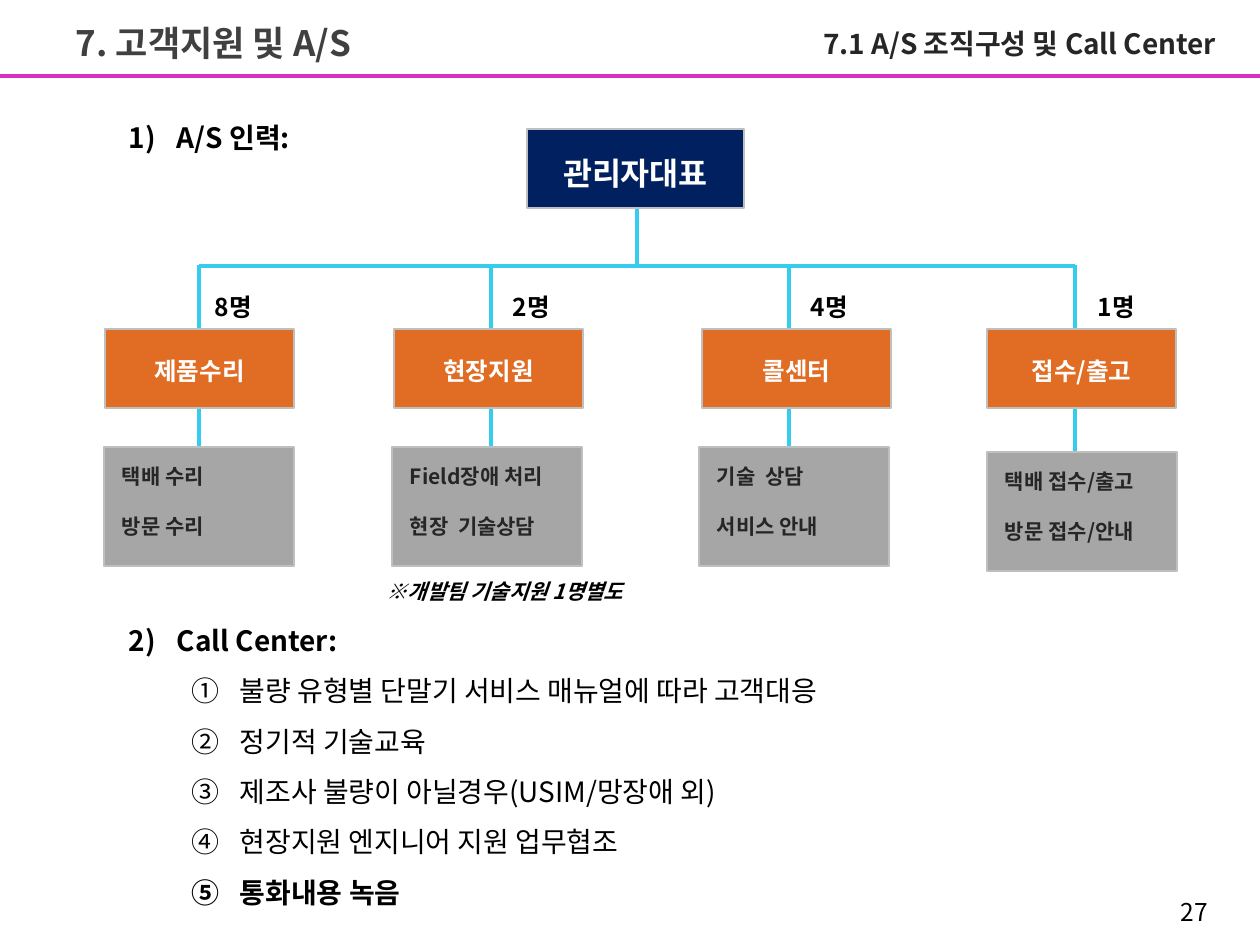
"""Build the A/S organisation and call center slide."""
from lxml import etree
from pptx import Presentation
from pptx.dml.color import RGBColor
from pptx.enum.shapes import MSO_CONNECTOR, MSO_SHAPE
from pptx.enum.text import PP_ALIGN
from pptx.oxml.ns import qn
from pptx.util import Pt

LEFT, CENTER, RIGHT = PP_ALIGN.LEFT, PP_ALIGN.CENTER, PP_ALIGN.RIGHT
RECT, STRAIGHT = MSO_SHAPE.RECTANGLE, MSO_CONNECTOR.STRAIGHT
FONT = "Noto Sans CJK KR"
CYAN, MAGENTA, NAVY, ORANGE, GRAY = "35CCEF", "D82EC4", "002060", "E16D25", "A6A6A6"
EDGE, WHITE, BLACK, DARK, TITLE = "BFBFBF", "FFFFFF", "000000", "262626", "404040"


def px(*values):
    return [round(v * 914400 / 126) for v in values]


def color(value):
    return RGBColor.from_string(value)


prs = Presentation()
prs.slide_width, prs.slide_height = px(1260, 945)
s = prs.slides.add_slide(prs.slide_layouts[6])

columns = [
    (199, 105, 104, 447, 215, "8명", "제품수리", ["택배 수리", "방문 수리"]),
    (491, 394, 392, 447, 513, "2명", "현장지원", ["Field장애 처리", "현장  기술상담"]),
    (789, 702, 699, 447, 811, "4명", "콜센터", ["기술  상담", "서비스 안내"]),
    (1075, 987, 987, 452, 1098, "1명", "접수/출고", ["택배 접수/출고", "방문 접수/안내"]),
]

lines = [(x, 265, x, 451, CYAN, 2) for x, *_ in columns]
lines += [
    (0, 76, 1260, 76, MAGENTA, 2.25),
    (199, 266, 1075, 266, CYAN, 2),
    (637, 208, 637, 265, CYAN, 2),
]
for x1, y1, x2, y2, stroke, width in lines:
    c = s.shapes.add_connector(STRAIGHT, *px(x1, y1, x2, y2))
    c.line.color.rgb = color(stroke)
    c.line.width = Pt(width)
    etree.SubElement(c._element.spPr, qn("a:effectLst"))

bold = {"bold": True}
items = [
    ((527, 129, 217, 79), NAVY, (0, 25), ["관리자대표"], 18, WHITE, CENTER, bold),
    ((76, 21, 540, 45), None, (0, 0), ["7. 고객지원 및 A/S"], 20, TITLE, LEFT, bold),
    ((689, 27, 527, 40), None, (0, 0), ["7.1 A/S 조직구성 및 Call Center"], 16, DARK, RIGHT, bold),
    ((387, 579, 274, 30), None, (0, 0), ["※개발팀 기술지원 1명별도"], 12, BLACK, LEFT,
     {"bold": True, "italic": True}),
    ((927, 897, 281, 32), None, (0, 0), ["27"], 14, BLACK, RIGHT, {}),
]
for _, team_x, task_x, task_y, count_x, count, team, tasks in columns:
    items += [
        ((team_x, 329, 189, 79), ORANGE, (0, 27), [team], 14, WHITE, CENTER, bold),
        ((task_x, task_y, 190, 119), GRAY, (18, 16), tasks, 12, DARK, LEFT, bold),
        ((count_x, 292, 60, 32), None, (0, 0), [count], 14, BLACK, LEFT, bold),
    ]

paragraphs = []
for box, fill, (inset_x, inset_y), texts, size, ink, align, style in items:
    if fill:
        sp = s.shapes.add_shape(RECT, *px(*box))
        sp.shadow.inherit = False
        sp.fill.solid()
        sp.fill.fore_color.rgb = color(fill)
        sp.line.color.rgb = color(EDGE)
        sp.line.width = Pt(1)
    else:
        sp = s.shapes.add_textbox(*px(*box))
    tf = sp.text_frame
    margins = px(inset_x, inset_y, 0, 0)
    tf.margin_left, tf.margin_top, tf.margin_right, tf.margin_bottom = margins
    tf.word_wrap = True
    tf.vertical_anchor = 1
    for i, text in enumerate(texts):
        p = tf.paragraphs[0] if i == 0 else tf.add_paragraph()
        p.alignment = align
        p.line_spacing = Pt(size * 1.2)
        if i:
            p.space_before = Pt(14.2)
        paragraphs.append((p, text, size, ink, style))

heading, numbered = (1, 111, "arabicParenR"), (2, 174, "circleNumDbPlain")
outline = [
    (104, [("A/S 인력:", heading, 1, True)]),
    (607, [
        ("Call Center:", heading, 2, True),
        ("불량 유형별 단말기 서비스 매뉴얼에 따라 고객대응", numbered, 1, False),
        ("정기적 기술교육", numbered, 1, False),
        ("제조사 불량이 아닐경우(USIM/망장애 외)", numbered, 1, False),
        ("현장지원 엔지니어 지원 업무협조", numbered, 1, False),
        ("통화내용 녹음", numbered, 1, True),
    ]),
]
for top, rows in outline:
    tf = s.shapes.add_textbox(*px(66, top, 1117, 51 * len(rows))).text_frame
    tf.margin_left = tf.margin_top = tf.margin_right = tf.margin_bottom = 0
    tf.word_wrap = True
    for i, (text, (level, margin, kind), start, strong) in enumerate(rows):
        p = tf.paragraphs[0] if i == 0 else tf.add_paragraph()
        p.level = level
        pPr = p._p.get_or_add_pPr()
        for name, value in zip(("marL", "indent"), px(margin, -48)):
            pPr.set(name, str(value))
        etree.SubElement(pPr, qn("a:buFont"), typeface=FONT)
        number = etree.SubElement(pPr, qn("a:buAutoNum"), type=kind)
        if start > 1:
            number.set("startAt", str(start))
        p.line_spacing = Pt(28.75)
        paragraphs.append((p, text, 16, BLACK, {"bold": strong}))

for p, text, size, ink, style in paragraphs:
    r = p.add_run()
    r.text = text
    r.font.color.rgb = color(ink)
    for name, value in {"name": FONT, "size": Pt(size), **style}.items():
        setattr(r.font, name, value)
    etree.SubElement(r._r.get_or_add_rPr(), qn("a:ea"), typeface=FONT)

prs.save("out.pptx")
